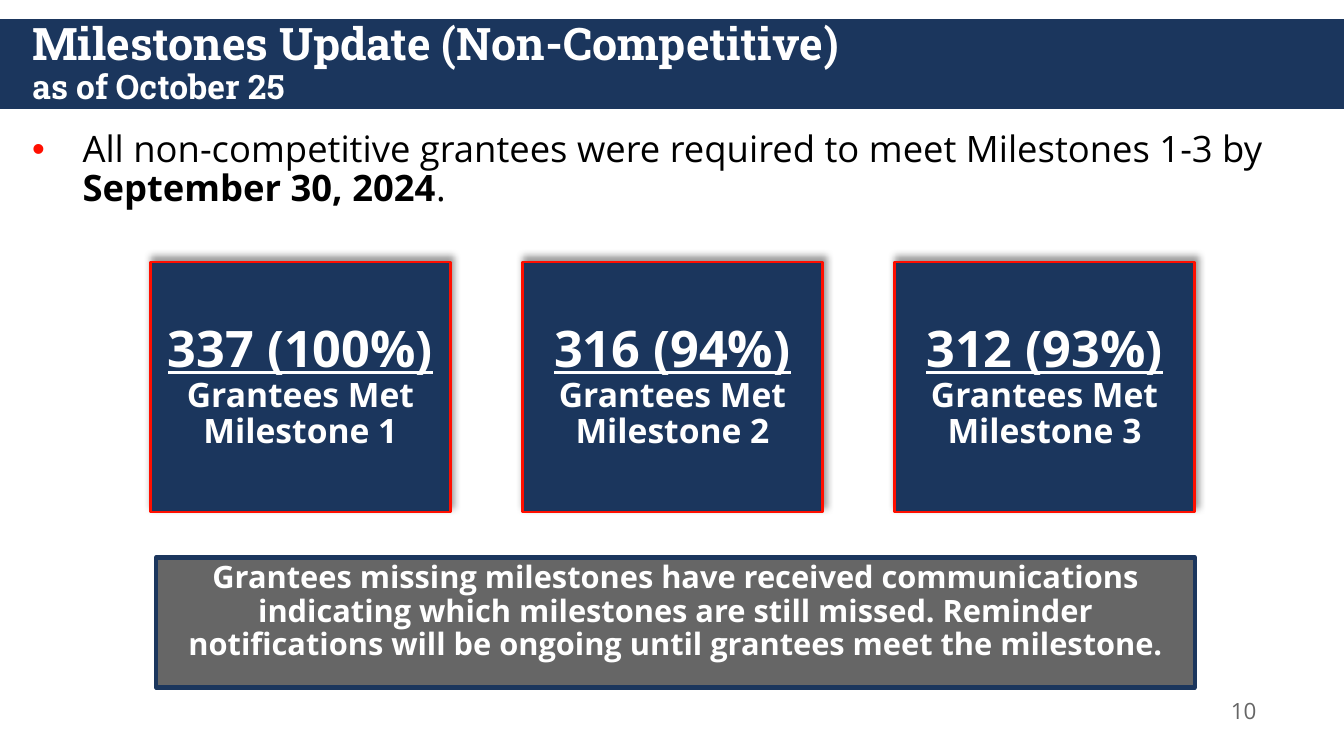
from dataclasses import dataclass

from lxml import etree
from pptx import Presentation
from pptx.dml.color import RGBColor
from pptx.enum.shapes import MSO_SHAPE
from pptx.enum.text import MSO_ANCHOR, PP_ALIGN
from pptx.oxml.ns import qn
from pptx.util import Inches, Pt

RECTANGLE = MSO_SHAPE.RECTANGLE
LEFT, CENTER = PP_ALIGN.LEFT, PP_ALIGN.CENTER
TOP, MIDDLE = MSO_ANCHOR.TOP, MSO_ANCHOR.MIDDLE


@dataclass(frozen=True)
class Theme:
    navy: str = "1B365D"
    red: str = "FF0F00"
    gray: str = "666666"
    white: str = "FFFFFF"
    black: str = "000000"
    heading_font: str = "Roboto Slab"
    body_font: str = "Open Sans"
    title_size: int = 32
    subtitle_size: int = 24
    body_size: int = 26
    figure_size: int = 36
    label_size: int = 24
    note_size: int = 22
    number_size: int = 16


THEME = Theme()


def add_paragraph(frame, runs, size, color, font=THEME.body_font, bold=False,
                  underline=False, align=LEFT, spacing=0.9, bullet=None):
    """Fill the first empty paragraph or append one; runs are text or (text, bold)."""
    paragraph = frame.paragraphs[0]
    if paragraph.runs:
        paragraph = frame.add_paragraph()
    if bullet:
        add_bullet(paragraph, bullet)
    paragraph.alignment = align
    paragraph.line_spacing = spacing
    for part in runs:
        text, strong = part if isinstance(part, tuple) else (part, bold)
        run = paragraph.add_run()
        run.text = text
        run.font.name = font
        run.font.size = Pt(size)
        run.font.bold = strong
        run.font.underline = underline
        run.font.color.rgb = RGBColor.from_string(color)


def add_bullet(paragraph, color):
    properties = paragraph._p.get_or_add_pPr()
    properties.set("marL", str(Inches(0.5)))
    properties.set("indent", str(-Inches(0.5)))
    bullet_color = etree.SubElement(properties, qn("a:buClr"))
    etree.SubElement(bullet_color, qn("a:srgbClr"), val=color)
    etree.SubElement(properties, qn("a:buFont"), typeface="Arial")
    etree.SubElement(properties, qn("a:buChar"), char="•")


def add_text_area(slide, left, top, width, height, anchor=TOP):
    area = slide.shapes.add_textbox(
        Inches(left), Inches(top), Inches(width), Inches(height))
    area.text_frame.word_wrap = True
    area.text_frame.vertical_anchor = anchor
    return area.text_frame


def add_panel(slide, left, top, width, height, fill, line=None, weight=0,
              anchor=TOP):
    panel = slide.shapes.add_shape(
        RECTANGLE, Inches(left), Inches(top), Inches(width), Inches(height))
    panel.shadow.inherit = False
    panel.fill.solid()
    panel.fill.fore_color.rgb = RGBColor.from_string(fill)
    if line:
        panel.line.color.rgb = RGBColor.from_string(line)
        panel.line.width = Pt(weight)
    else:
        panel.line.fill.background()
    panel.text_frame.word_wrap = True
    panel.text_frame.vertical_anchor = anchor
    return panel


def add_shadow(panel):
    """Cast a soft shadow upward and slightly to the right."""
    effects = panel._element.spPr.find(qn("a:effectLst"))
    shadow = etree.SubElement(
        effects, qn("a:outerShdw"), blurRad=str(Pt(5)), dist=str(Pt(4)),
        dir=str(290 * 60000), algn="ctr", rotWithShape="0")
    color = etree.SubElement(shadow, qn("a:srgbClr"), val=THEME.black)
    etree.SubElement(color, qn("a:alpha"), val="40000")


def add_milestone_card(slide, left, figure, label):
    card = add_panel(slide, left, 2.6, 2.98, 2.48, THEME.navy,
                     line=THEME.red, weight=2, anchor=MIDDLE)
    add_shadow(card)
    add_paragraph(card.text_frame, [figure], THEME.figure_size, THEME.white,
                  bold=True, underline=True, align=CENTER)
    add_paragraph(card.text_frame, [label], THEME.label_size, THEME.white,
                  bold=True, align=CENTER)


def main():
    deck = Presentation()
    deck.slide_width, deck.slide_height = Inches(13.33), Inches(7.5)
    slide = deck.slides.add_slide(deck.slide_layouts[6])

    # Title band
    add_panel(slide, 0, 0.19, 13.33, 0.89, THEME.navy)
    title = add_text_area(slide, 0.22, 0.19, 12.89, 0.9, anchor=MIDDLE)
    for text, size in (
            ("Milestones Update (Non-Competitive)", THEME.title_size),
            ("as of October 25", THEME.subtitle_size)):
        add_paragraph(title, [text], size, THEME.white,
                      font=THEME.heading_font, bold=True)

    # Requirement
    requirement = add_text_area(slide, 0.22, 1.25, 12.89, 1.01)
    add_paragraph(
        requirement,
        ["All non-competitive grantees were required to meet Milestones 1-3 by ",
         ("September 30, 2024", True), "."],
        THEME.body_size, THEME.black, bullet=THEME.red)

    # Milestone cards
    for index, figure in enumerate(("337 (100%)", "316 (94%)", "312 (93%)")):
        add_milestone_card(slide, 1.49 + 3.69 * index, figure,
                           f"Grantees Met Milestone {index + 1}")

    # Reminder note
    note = add_panel(slide, 1.55, 5.53, 10.3, 1.29, THEME.gray,
                     line=THEME.navy, weight=3)
    add_paragraph(
        note.text_frame,
        ["Grantees missing milestones have received communications indicating "
         "which milestones are still missed. Reminder notifications will be "
         "ongoing until grantees meet the milestone."],
        THEME.note_size, THEME.white, bold=True, align=CENTER)

    # Page number
    page_number = add_text_area(slide, 12, 6.84, 0.67, 0.42, anchor=MIDDLE)
    add_paragraph(page_number, ["10"], THEME.number_size, THEME.gray,
                  align=CENTER, spacing=1.0)

    deck.save("out.pptx")


if __name__ == "__main__":
    main()
